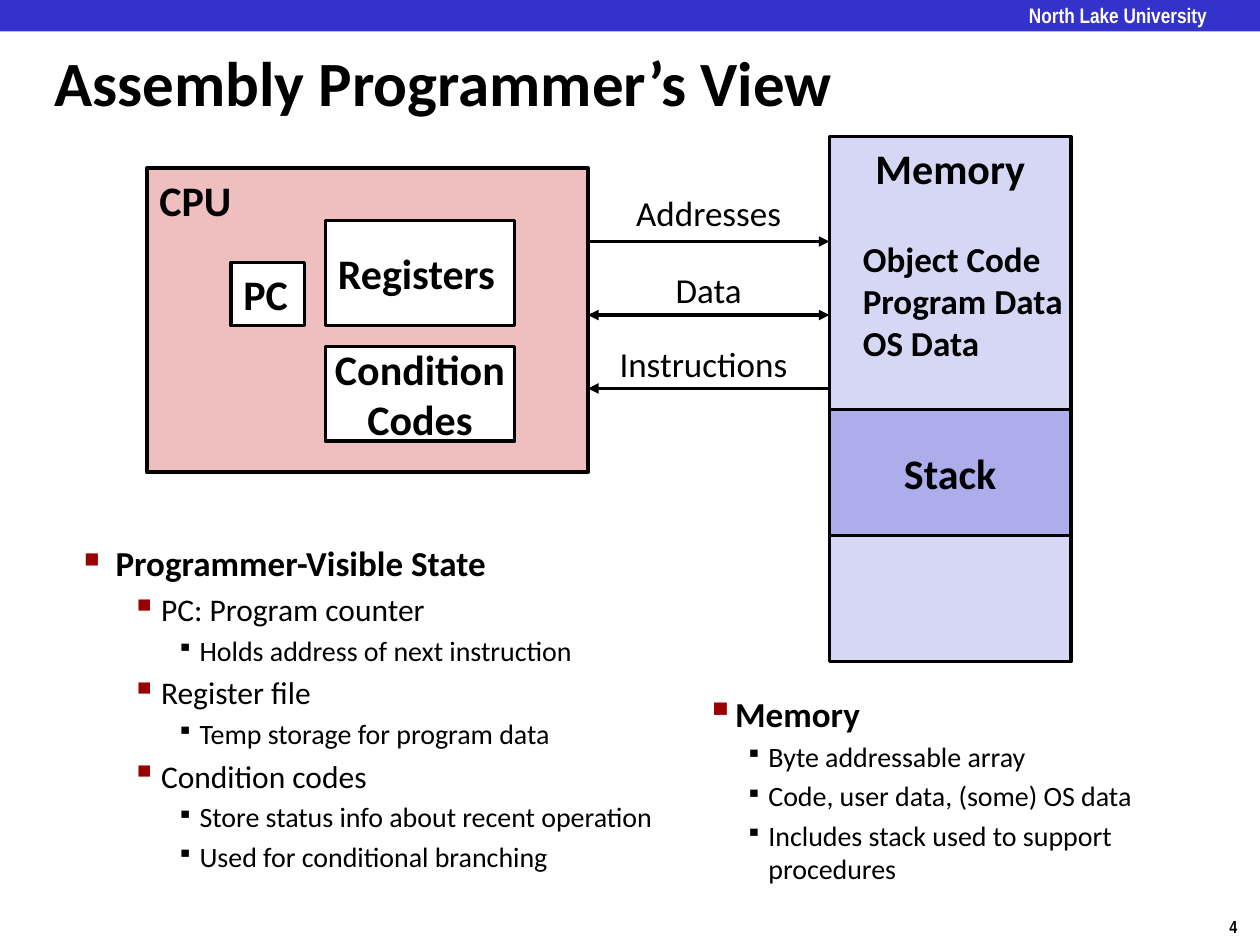
from dataclasses import dataclass
from typing import NamedTuple

from lxml.etree import SubElement
from pptx import Presentation
from pptx.dml.color import RGBColor
from pptx.enum.shapes import MSO_CONNECTOR as Connector, MSO_SHAPE as Preset
from pptx.enum.text import MSO_ANCHOR as Anchor, PP_ALIGN as Align
from pptx.oxml.ns import qn
from pptx.util import Pt

BLACK, WHITE, RED = "000000", "FFFFFF", "990000"
MEMORY_LEFT, MEMORY_WIDTH = 474, 138
CPU_RIGHT = 336


class Area(NamedTuple):
    left: float
    top: float
    width: float
    height: float


@dataclass
class Block:
    label: str
    area: Area
    fill: str
    anchor: Anchor = Anchor.MIDDLE
    align: Align = Align.LEFT
    line: float = 2


@dataclass
class Bus:
    label: str
    y: float
    label_top: float
    label_width: float
    to_cpu: bool
    to_memory: bool


@dataclass
class Level:
    size: float
    margin: float
    hanging: float
    bullet: str
    bullet_percent: int
    bullet_colour: str = BLACK
    bold: bool = False


STATE = Level(20, 18, 18, "■", 60, RED, True)
PART = Level(18, 44, 17, "▪", 110, RED)
DETAIL = Level(16, 66, 13, "▪", 80)
MEMORY_HEAD = Level(20, 23, 13.5, "▪", 110, RED, True)
MEMORY_DETAIL = Level(16, 45, 13, "▪", 80)

BLOCKS = [
    Block("CPU", Area(84, 96, 252, 174), "EFBFBF", Anchor.TOP, line=2.25),
    Block("PC", Area(132, 150, 42, 36), WHITE),
    Block("Registers", Area(186, 126, 108, 60), WHITE),
    Block("Condition\nCodes", Area(186, 198, 108, 54), WHITE, align=Align.CENTER),
    Block("Memory", Area(MEMORY_LEFT, 78, MEMORY_WIDTH, 300), "D6D6F5",
          Anchor.TOP, Align.CENTER),
    Block("Stack", Area(MEMORY_LEFT, 234, MEMORY_WIDTH, 72), "ADADEB",
          align=Align.CENTER),
]

BUSES = [
    Bus("Addresses", 138, 106, 138, False, True),
    Bus("Data", 180, 150, 138, True, True),
    Bus("Instructions", 222, 192, 132, True, False),
]

STATE_OUTLINE = [
    (STATE, "Programmer-Visible State"),
    (PART, "PC: Program counter"),
    (DETAIL, "Holds address of next instruction"),
    (PART, "Register file"),
    (DETAIL, "Temp storage for program data"),
    (PART, "Condition codes"),
    (DETAIL, "Store status info about recent operation"),
    (DETAIL, "Used for conditional branching"),
]

MEMORY_OUTLINE = [
    (MEMORY_HEAD, "Memory"),
    (MEMORY_DETAIL, "Byte addressable array"),
    (MEMORY_DETAIL, "Code, user data, (some) OS data"),
    (MEMORY_DETAIL, "Includes stack used to support procedures"),
]


def paint(target, colour: str) -> None:
    """Give a fill, of a shape, line or font, one solid colour."""
    target.solid()
    target.fore_color.rgb = RGBColor.from_string(colour)


def write(frame, text: str, *, size: float, bold: bool = False,
          colour: str = BLACK, font: str = "Calibri", align: Align = Align.LEFT,
          anchor: Anchor = Anchor.TOP, wrap: bool = True,
          inset: bool = True) -> None:
    """Fill a text frame, one paragraph for each line of text."""
    frame.text = text
    frame.word_wrap = wrap
    frame.vertical_anchor = anchor
    if not inset:
        frame.margin_left = frame.margin_right = Pt(0)
        frame.margin_top = frame.margin_bottom = Pt(0)
    for paragraph in frame.paragraphs:
        paragraph.alignment = align
        for run in paragraph.runs:
            run.font.name = font
            run.font.size = Pt(size)
            run.font.bold = bold
            paint(run.font.fill, colour)


def add_text(slide, area: Area, text: str, **text_format):
    frame = slide.shapes.add_textbox(*map(Pt, area)).text_frame
    write(frame, text, **text_format)
    return frame


def add_rectangle(slide, area: Area, fill: str, line: float = 0):
    rectangle = slide.shapes.add_shape(Preset.RECTANGLE, *map(Pt, area))
    rectangle.shadow.inherit = False
    paint(rectangle.fill, fill)
    if line:
        paint(rectangle.line.fill, BLACK)
        rectangle.line.width = Pt(line)
    else:
        rectangle.line.fill.background()
    return rectangle


def add_block(slide, block: Block) -> None:
    rectangle = add_rectangle(slide, block.area, block.fill, block.line)
    write(rectangle.text_frame, block.label, size=24, bold=True,
          align=block.align, anchor=block.anchor, wrap=False)
    if block.label == "CPU":
        rectangle.text_frame.word_wrap = True


def add_bus(slide, bus: Bus) -> None:
    arrow = slide.shapes.add_connector(
        Connector.STRAIGHT, Pt(CPU_RIGHT), Pt(bus.y), Pt(MEMORY_LEFT), Pt(bus.y))
    paint(arrow.line.fill, BLACK)
    arrow.line.width = Pt(2)
    properties = arrow.element.spPr
    line = properties.find(qn("a:ln"))
    for end, shown in (("a:headEnd", bus.to_cpu), ("a:tailEnd", bus.to_memory)):
        if shown:
            SubElement(line, qn(end), type="triangle")
    SubElement(properties, qn("a:effectLst"))
    add_text(slide, Area(CPU_RIGHT, bus.label_top, bus.label_width, 31),
             bus.label, size=20, align=Align.CENTER)


def add_outline(slide, area: Area, entries: list[tuple[Level, str]]) -> None:
    frame = add_text(slide, area, "\n".join(text for _, text in entries), size=16)
    for paragraph, (level, _) in zip(frame.paragraphs, entries):
        paragraph.space_before = Pt(0.2 * level.size)
        for run in paragraph.runs:
            run.font.size = Pt(level.size)
            run.font.bold = level.bold
        properties = paragraph._p.get_or_add_pPr()
        properties.set("marL", str(Pt(level.margin)))
        properties.set("indent", str(-Pt(level.hanging)))
        bullet_colour = SubElement(properties, qn("a:buClr"))
        SubElement(bullet_colour, qn("a:srgbClr"), val=level.bullet_colour)
        SubElement(properties, qn("a:buSzPct"), val=str(level.bullet_percent * 1000))
        SubElement(properties, qn("a:buChar"), char=level.bullet)


def main() -> None:
    deck = Presentation()
    deck.slide_width, deck.slide_height = Pt(720), Pt(540)
    slide = deck.slides.add_slide(deck.slide_layouts[6])

    add_text(slide, Area(695.5, 520, 24.5, 19), "4", size=10, bold=True,
             font="Arial Narrow", wrap=False)
    add_rectangle(slide, Area(0, 0, 720, 18), "3333CC")
    add_text(slide, Area(588, 1.5, 120, 13.5), "North Lake University", size=12,
             bold=True, colour=WHITE, font="Arial Narrow", inset=False)
    add_text(slide, Area(24, 24, 569, 45), "Assembly Programmer’s View",
             size=36, bold=True, anchor=Anchor.MIDDLE)

    for block in BLOCKS:
        add_block(slide, block)
    add_text(slide, Area(486, 132, 138, 80),
             "Object Code\nProgram Data\nOS Data", size=20, bold=True)
    for bus in BUSES:
        add_bus(slide, bus)
    add_outline(slide, Area(41, 306, 343, 214), STATE_OUTLINE)
    add_outline(slide, Area(387, 392, 321, 124), MEMORY_OUTLINE)
    deck.save("out.pptx")


if __name__ == "__main__":
    main()
